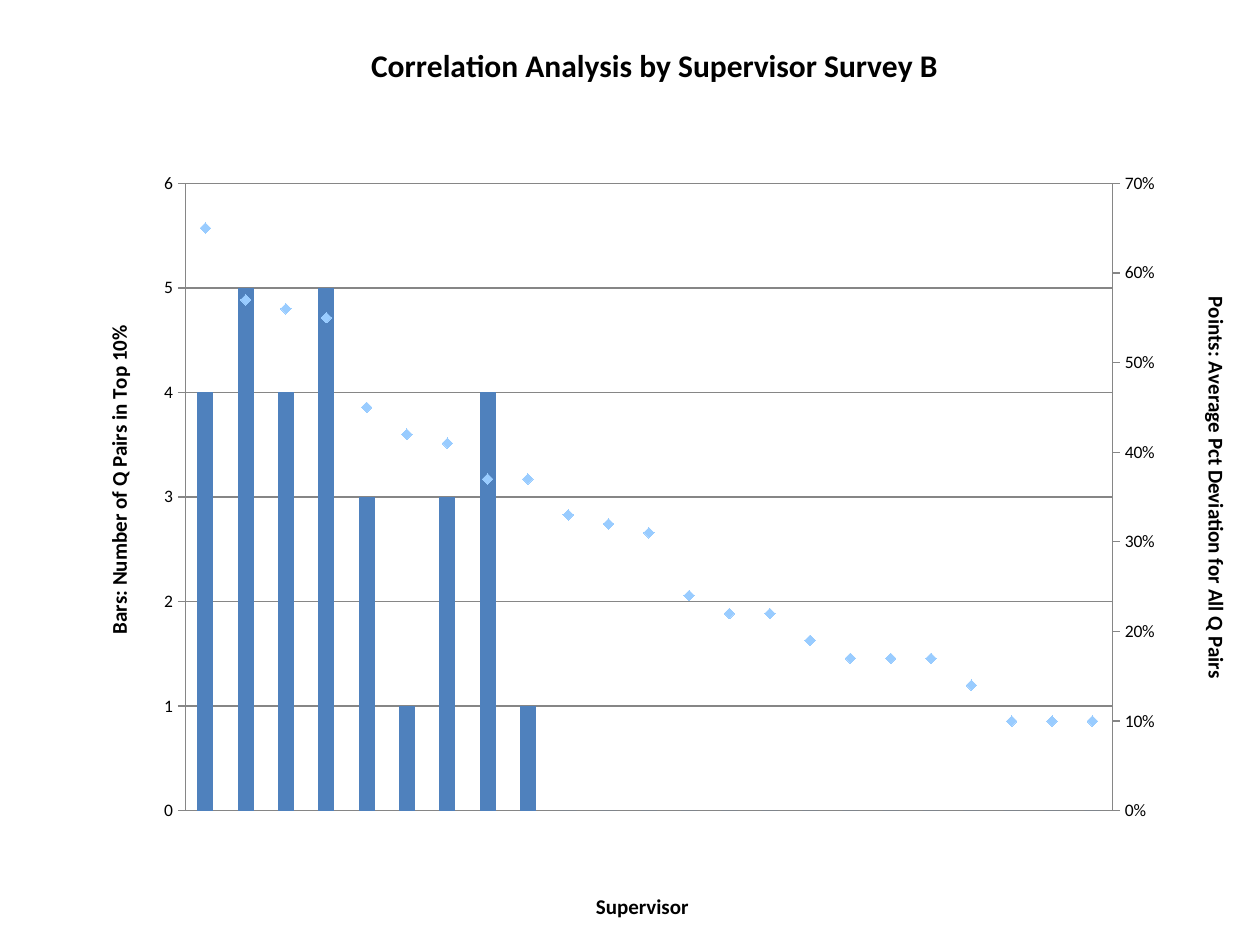
from copy import deepcopy

from pptx import Presentation
from pptx.chart.axis import ValueAxis
from pptx.chart.data import CategoryChartData
from pptx.dml.color import RGBColor
from pptx.enum.chart import XL_CHART_TYPE as ChartType
from pptx.enum.chart import XL_MARKER_STYLE as MarkerStyle
from pptx.enum.chart import XL_TICK_LABEL_POSITION as LabelPosition
from pptx.enum.chart import XL_TICK_MARK as TickMark
from pptx.oxml import parse_xml
from pptx.oxml.ns import nsdecls, qn
from pptx.util import Inches, Pt

BLACK = RGBColor(0x00, 0x00, 0x00)
GRAY = RGBColor(0x86, 0x86, 0x86)
BAR_BLUE = RGBColor(0x4F, 0x81, 0xBD)
POINT_BLUE = RGBColor(0x99, 0xCC, 0xFF)

PAIR_COUNTS = [4, 5, 4, 5, 3, 1, 3, 4, 1] + [0] * 14
DEVIATIONS = [0.65, 0.57, 0.56, 0.55, 0.45, 0.42, 0.41, 0.37, 0.37, 0.33, 0.32, 0.31,
              0.24, 0.22, 0.22, 0.19, 0.17, 0.17, 0.17, 0.14, 0.1, 0.1, 0.1]


def manual_layout(x, y, size=None):
    """Chart layout in fractions of the chart; size is given for the inner plot area."""
    target, extent = "", ""
    if size:
        target = '<c:layoutTarget val="inner"/>'
        extent = f'<c:w val="{size[0]}"/><c:h val="{size[1]}"/>'
    return parse_xml(
        f'<c:layout {nsdecls("c")}><c:manualLayout>{target}'
        '<c:xMode val="edge"/><c:yMode val="edge"/>'
        f'<c:x val="{x}"/><c:y val="{y}"/>{extent}</c:manualLayout></c:layout>')


def replace_layout(element, layout):
    for old_layout in element.findall(qn("c:layout")):
        element.remove(old_layout)
    position = 1 if element.find(qn("c:tx")) is not None else 0
    element.insert(position, layout)


def set_title(title, text, size, x, y, rotation=0):
    """Fill a chart or axis title; rotation is in degrees."""
    frame = title.text_frame
    frame.text = text
    font = frame.paragraphs[0].runs[0].font
    font.name, font.size, font.bold = "Calibri", Pt(size), True
    font.color.rgb = BLACK
    body = title.element.find(".//" + qn("a:bodyPr"))
    body.set("rot", str(rotation * 60000))
    body.set("vert", "horz")
    replace_layout(title.element, manual_layout(x, y))


def style_value_axis(axis, maximum, unit, number_format):
    axis.minimum_scale, axis.maximum_scale = 0, maximum
    axis.major_unit = unit
    axis.major_tick_mark, axis.minor_tick_mark = TickMark.OUTSIDE, TickMark.NONE
    axis.tick_label_position = LabelPosition.NEXT_TO_AXIS
    axis.tick_labels.number_format = number_format
    axis.tick_labels.number_format_is_linked = False
    axis.format.line.color.rgb = GRAY
    axis.format.line.width = Pt(0.75)


def move_points_to_right_axis(chart):
    """Turn the second series into a line on its own axes; return the right axis."""
    plot_area = chart.element.find(".//" + qn("c:plotArea"))
    bar_chart = plot_area.find(qn("c:barChart"))
    points = bar_chart.findall(qn("c:ser"))[1]
    for tag in points.findall(qn("c:invertIfNegative")):
        points.remove(tag)
    line_chart = parse_xml(
        f'<c:lineChart {nsdecls("c")}><c:grouping val="standard"/><c:varyColors val="0"/>'
        '<c:marker val="1"/><c:axId val="5001"/><c:axId val="5002"/></c:lineChart>')
    line_chart.insert(2, points)
    bar_chart.addnext(line_chart)

    value_axis = plot_area.find(qn("c:valAx"))
    category_copy = deepcopy(plot_area.find(qn("c:catAx")))
    value_copy = deepcopy(value_axis)
    for axis, own, crossed in ((category_copy, "5001", "5002"), (value_copy, "5002", "5001")):
        axis.find(qn("c:axId")).set("val", own)
        axis.find(qn("c:crossAx")).set("val", crossed)
    value_copy.find(qn("c:axPos")).set("val", "r")
    value_copy.find(qn("c:crosses")).set("val", "max")
    value_axis.addnext(value_copy)
    value_copy.addnext(category_copy)
    right_axis = ValueAxis(value_copy)
    right_axis.has_major_gridlines = False
    return right_axis


def add_correlation_chart(slide, left, top, width, height):
    data = CategoryChartData()
    data.categories = [str(number + 1) for number in range(len(PAIR_COUNTS))]
    data.add_series("Series 1", PAIR_COUNTS)
    data.add_series("Series 2", DEVIATIONS, number_format="0%")
    chart = slide.shapes.add_chart(
        ChartType.COLUMN_CLUSTERED, left, top, width, height, data).chart
    chart.has_legend = False
    chart.font.name, chart.font.size = "Calibri", Pt(10)
    chart.font.color.rgb = BLACK

    chart.category_axis.visible = False
    left_axis = chart.value_axis
    left_axis.has_major_gridlines = True
    left_axis.major_gridlines.format.line.color.rgb = GRAY
    left_axis.major_gridlines.format.line.width = Pt(0.75)
    right_axis = move_points_to_right_axis(chart)
    style_value_axis(left_axis, 6, 1, "General")
    style_value_axis(right_axis, 0.7, 0.1, "0%")

    bar_plot, point_plot = chart.plots
    bar_plot.gap_width = 150
    bar_plot.vary_by_categories = False
    bars, points = bar_plot.series[0], point_plot.series[0]
    bars.format.fill.solid()
    bars.format.fill.fore_color.rgb = BAR_BLUE
    points.smooth = False
    points.format.line.fill.background()
    points.marker.style, points.marker.size = MarkerStyle.DIAMOND, 6
    points.marker.format.fill.solid()
    points.marker.format.fill.fore_color.rgb = POINT_BLUE
    points.marker.format.line.color.rgb = POINT_BLUE

    set_title(chart.chart_title, "Correlation Analysis by Supervisor Survey B", 18, 0.29, 0.04)
    chart.chart_title.element.find(qn("c:overlay")).set("val", "1")
    set_title(chart.category_axis.axis_title, "Supervisor", 12, 0.47, 0.94)
    set_title(left_axis.axis_title, "Bars: Number of Q Pairs in Top 10%", 12, 0.08, 0.34, -90)
    set_title(right_axis.axis_title, "Points: Average Pct Deviation for All Q Pairs",
              12, 0.95, 0.31, 90)
    replace_layout(chart.element.find(".//" + qn("c:plotArea")),
                   manual_layout(0.147, 0.194, (0.736, 0.664)))


def main():
    presentation = Presentation()
    presentation.slide_width, presentation.slide_height = Inches(10), Inches(7.5)
    slide = presentation.slides.add_slide(presentation.slide_layouts[6])
    add_correlation_chart(slide, Inches(0), Inches(0), Inches(10), Inches(7.5))
    presentation.save("out.pptx")


if __name__ == "__main__":
    main()
